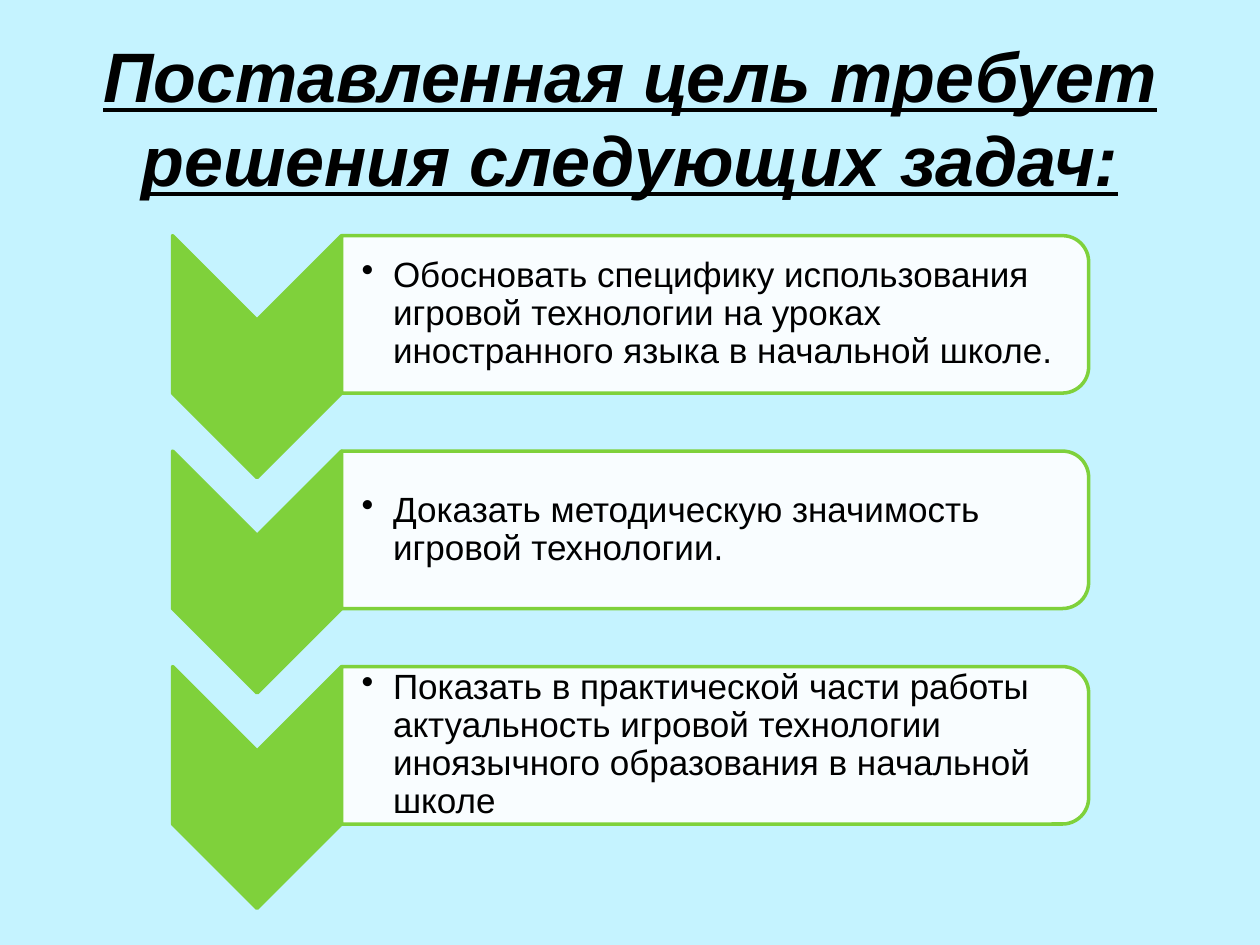
from lxml import etree
from pptx import Presentation
from pptx.dml.color import RGBColor
from pptx.enum import shapes, text
from pptx.oxml import ns
from pptx.util import Inches, Pt

GREEN = "7FD13B"
TASKS = [
    "Обосновать специфику использования игровой технологии на уроках иностранного языка в начальной школе.",
    "Доказать методическую значимость игровой технологии.",
    "Показать в практической части работы актуальность игровой технологии "
    "иноязычного образования в начальной школе",
]


def color(value):
    return RGBColor.from_string(value)


def write(frame, words, size, align=None, bullet=False, spacing=None, **styles):
    """Put one formatted paragraph into a text frame."""
    frame.word_wrap = True
    frame.vertical_anchor = text.MSO_ANCHOR.MIDDLE
    para = frame.paragraphs[0]
    para.alignment = align
    para.line_spacing = spacing
    if bullet:
        props = para._p.get_or_add_pPr()
        props.set("marL", str(Inches(0.25)))
        props.set("indent", str(Inches(-0.25)))
        etree.SubElement(props, ns.qn("a:buChar"), char="•")
    span = para.add_run()
    span.text = words
    span.font.name = "Arial"
    span.font.size = Pt(size)
    span.font.color.rgb = color("000000")
    for name, value in styles.items():
        setattr(span.font, name, value)


def add_turned(page, kind, left, top, width, height, fill, alpha=None):
    """Add a shape turned by 90 degrees that covers the given box."""
    shape = page.shapes.add_shape(
        kind,
        Inches(left + (width - height) / 2), Inches(top + (height - width) / 2),
        Inches(height), Inches(width))
    shape.rotation = 90
    shape.shadow.inherit = False
    shape.fill.solid()
    shape.fill.fore_color.rgb = color(fill)
    if alpha is not None:
        tone = shape.fill._xPr.find(".//" + ns.qn("a:srgbClr"))
        etree.SubElement(tone, ns.qn("a:alpha"), val=str(alpha * 1000))
    shape.line.color.rgb = color(GREEN)
    shape.line.width = Pt(2)
    return shape


def add_title(page, left, top, width, height):
    title = page.shapes.title
    title.left, title.top = Inches(left), Inches(top)
    title.width, title.height = Inches(width), Inches(height)
    write(title.text_frame, "Поставленная цель требует решения следующих задач:",
          40, align=text.PP_ALIGN.CENTER, bold=True, italic=True, underline=True)


def add_task(page, words, left, top, width, height):
    """Add one row: a chevron pointing down and a bar with the task."""
    arrow_width, bar_height, margin = 1.34, 1.25, 0.06
    bar_left, bar_width = left + arrow_width, width - arrow_width
    add_turned(page, shapes.MSO_SHAPE.CHEVRON, left, top, arrow_width, height, GREEN)
    add_turned(page, shapes.MSO_SHAPE.ROUND_2_SAME_RECTANGLE,
               bar_left, top, bar_width, bar_height, "FFFFFF", alpha=90)
    # Task text
    box = page.shapes.add_textbox(
        Inches(bar_left), Inches(top + margin),
        Inches(bar_width - margin), Inches(bar_height - 2 * margin))
    frame = box.text_frame
    frame.margin_left = Inches(0.16)
    frame.margin_top = frame.margin_right = frame.margin_bottom = Inches(0.01)
    write(frame, words, 20, bullet=True, spacing=0.9)


def main():
    deck = Presentation()
    deck.slide_width, deck.slide_height = Inches(10), Inches(7.5)
    page = deck.slides.add_slide(deck.slide_layouts[5])
    page.background.fill.solid()
    page.background.fill.fore_color.rgb = color("C5F3FF")

    add_title(page, 0.5, 0.3, 9, 1.25)
    # Rows at an equal pitch
    for row, words in enumerate(TASKS):
        add_task(page, words, 1.37, 1.87 + 1.71 * row, 7.27, 1.92)
    deck.save("out.pptx")


if __name__ == "__main__":
    main()
